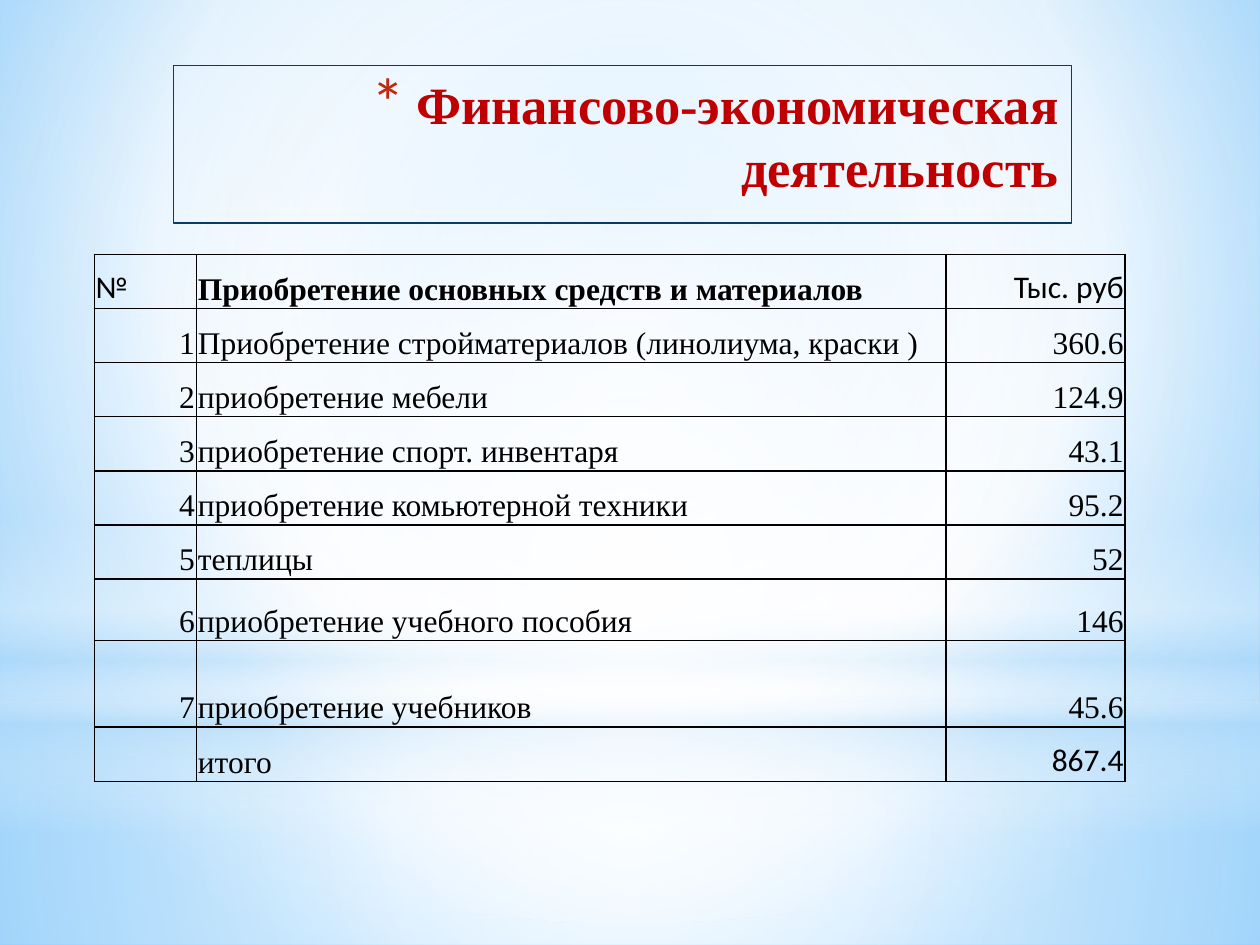
from lxml import etree
from pptx import Presentation
from pptx.dml.color import RGBColor as Rgb
from pptx.enum.shapes import MSO_SHAPE as Form
from pptx.enum.text import MSO_ANCHOR as Anchor, PP_ALIGN as Align
from pptx.oxml import parse_xml
from pptx.oxml.ns import nsdecls, qn
from pptx.util import Cm, Pt

BLACK = Rgb(0, 0, 0)
WHITE = Rgb(255, 255, 255)
RED = Rgb(0xC0, 0, 0)
RUST = Rgb(0xC3, 0x26, 0x0C)
NAVY = Rgb(0x07, 0x3C, 0x65)
SKY = Rgb(0x9E, 0xD5, 0xFF)
BLUE = Rgb(0x5B, 0xB9, 0xFF)
PALE = Rgb(0xB4, 0xDC, 0xFA)
SERIF, SANS = "Times New Roman", "Calibri"
MID = (50, 50, 50, 50)

ROWS = [
    ("№", "Приобретение основных средств и материалов", "Тыс. руб"),
    ("1", "Приобретение стройматериалов (линолиума, краски )", "360.6"),
    ("2", "приобретение мебели", "124.9"),
    ("3", "приобретение спорт. инвентаря", "43.1"),
    ("4", "приобретение комьютерной техники", "95.2"),
    ("5", "теплицы", "52"),
    ("6", "приобретение учебного пособия", "146"),
    ("7", "приобретение учебников", "45.6"),
    ("", "итого", "867.4"),
]
WIDTHS = (2.06, 15.11, 3.61)
HEIGHTS = [1.09] * 6 + [1.24, 1.75, 1.09]


def blend(stops, focus=None):
    marks = "".join(
        f'<a:gs pos="{pos * 1000}"><a:srgbClr val="{color}">'
        f'<a:alpha val="{alpha * 1000}"/></a:srgbClr></a:gs>'
        for pos, color, alpha in stops
    )
    if focus:
        sides = " ".join(f'{s}="{v * 1000}"' for s, v in zip("ltrb", focus))
        way = f'<a:path path="circle"><a:fillToRect {sides}/></a:path>'
    else:
        way = '<a:lin ang="5400000" scaled="0"/>'
    return parse_xml(
        f'<a:gradFill {nsdecls("a")} rotWithShape="1">'
        f"<a:gsLst>{marks}</a:gsLst>{way}</a:gradFill>"
    )


def swap(parent, fill):
    parent.replace(parent.find(qn("a:noFill")), fill)


class Deck:
    def __init__(self):
        self.file = Presentation()
        self.file.slide_width, self.file.slide_height = Cm(25.4), Cm(19.05)
        self.slide = self.file.slides.add_slide(self.file.slide_layouts[6])
        self.size = Pt(18)

    def back(self, stops, focus):
        self.slide.background.fill.background()
        swap(self.slide.element.xpath(".//p:bgPr")[0], blend(stops, focus))

    def glow(self, form, top, height, stops, focus=None):
        shape = self.slide.shapes.add_shape(form, 0, Cm(top), Cm(25.4), Cm(height))
        shape.shadow.inherit = False
        shape.line.fill.background()
        shape.fill.background()
        swap(shape.element.spPr, blend(stops, focus))

    def title(self, text, *box):
        shape = self.slide.shapes.add_textbox(*map(Cm, box))
        shape.line.color.rgb, shape.line.width = NAVY, Pt(0.75)
        frame = shape.text_frame
        frame.word_wrap, frame.vertical_anchor = True, Anchor.TOP
        para = frame.paragraphs[0]
        para.text, para.alignment = text, Align.RIGHT
        props = para._p.get_or_add_pPr()
        props.set("marL", str(Cm(0.89)))
        props.set("indent", str(-Cm(0.89)))
        color = etree.SubElement(props, qn("a:buClr"))
        etree.SubElement(color, qn("a:srgbClr"), val=str(RUST))
        etree.SubElement(props, qn("a:buSzPct"), val="128000")
        etree.SubElement(props, qn("a:buFont"), typeface=SANS)
        etree.SubElement(props, qn("a:buChar"), char="*")
        self.style(para, SERIF, Pt(30), RED, True)

    def style(self, para, name, size, color, bold):
        font = para.font
        font.name, font.size, font.bold = name, size, bold
        font.color.rgb = color

    def edge(self, cell):
        props = cell._tc.get_or_add_tcPr()
        for side in "LRTB":
            line = etree.SubElement(props, qn(f"a:ln{side}"), w=str(Pt(1)))
            fill = etree.SubElement(line, qn("a:solidFill"))
            etree.SubElement(fill, qn("a:srgbClr"), val=str(BLACK))

    def cell(self, cell, text, name, align, bold):
        self.edge(cell)
        cell.fill.background()
        cell.vertical_anchor = Anchor.BOTTOM
        cell.margin_left = cell.margin_right = Cm(0.03)
        cell.margin_top = cell.margin_bottom = Cm(0.03)
        para = cell.text_frame.paragraphs[0]
        para.text, para.alignment, para.line_spacing = text, align, 1.15
        self.style(para, name, self.size, BLACK, bold)

    def table(self, rows, left, top, widths, heights):
        box = map(Cm, (left, top, sum(widths), sum(heights)))
        grid = self.slide.shapes.add_table(len(rows), len(widths), *box).table
        grid.first_row = grid.horz_banding = False
        for col, width in zip(grid.columns, widths):
            col.width = Cm(width)
        last = len(rows) - 1
        for r, (row, height) in enumerate(zip(rows, heights)):
            grid.rows[r].height = Cm(height)
            for c, text in enumerate(row):
                sans = c != 1 and r in (0, last)
                left_side = c == 1 or (r, c) == (0, 0)
                self.cell(
                    grid.cell(r, c), text, SANS if sans else SERIF,
                    Align.LEFT if left_side else Align.RIGHT, (r, c) == (0, 1),
                )


def main():
    deck = Deck()
    deck.back([(0, SKY, 100), (60, WHITE, 100), (100, BLUE, 100)], (20, 10, 20, 60))
    deck.glow(Form.RECTANGLE, 14.17, 4.88,
              [(0, WHITE, 91), (37, WHITE, 76), (100, PALE, 79)], MID)
    deck.glow(Form.RECTANGLE, 0, 14.17,
              [(0, WHITE, 89), (48, WHITE, 62), (100, PALE, 79)], MID)
    deck.glow(Form.RECTANGLE, 10.46, 6.35,
              [(0, WHITE, 0), (29, WHITE, 30), (45, PALE, 40),
               (55, WHITE, 26), (65, PALE, 60), (100, WHITE, 0)])
    deck.glow(Form.OVAL, 4.45, 14.17, [(0, WHITE, 100), (56, WHITE, 0)], MID)
    deck.title("Финансово-экономическая деятельность", 3.5, 1.32, 18.1, 3.18)
    deck.table(ROWS, 1.9, 5.13, WIDTHS, HEIGHTS)
    deck.file.save("out.pptx")


if __name__ == "__main__":
    main()
